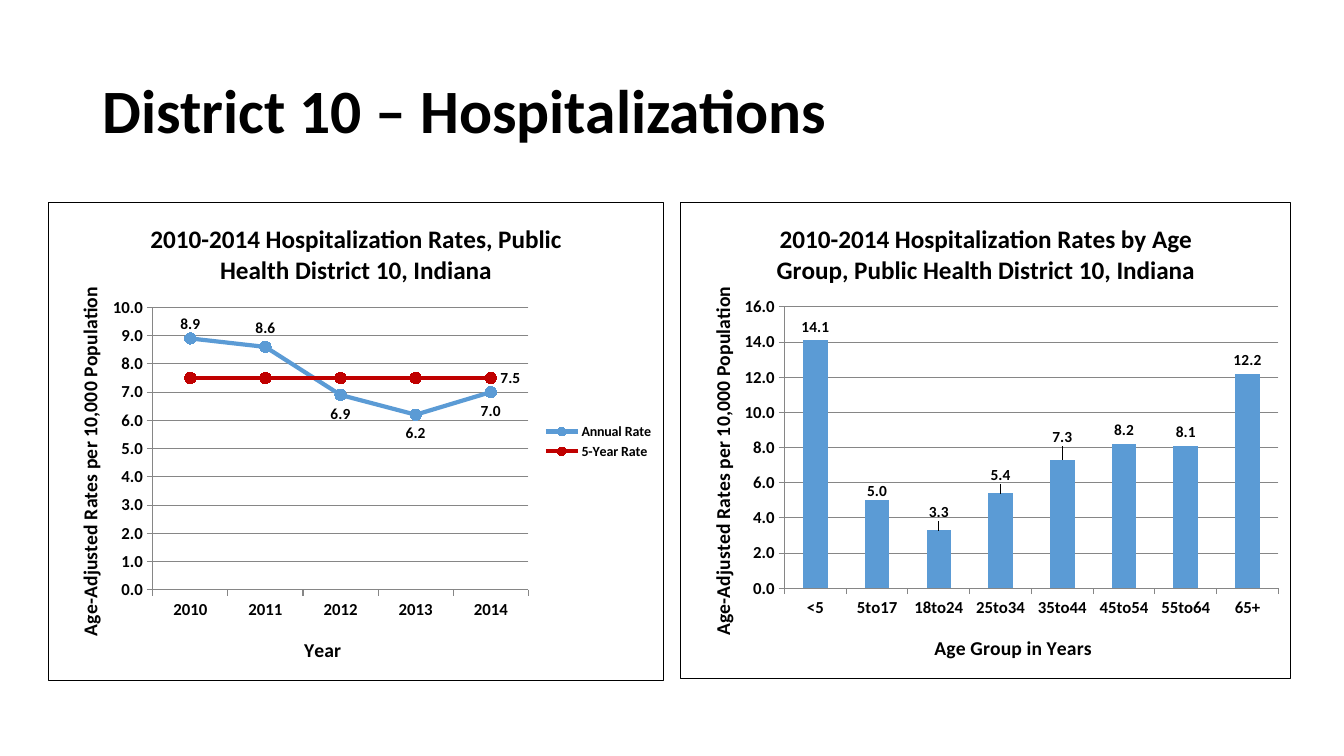
"""Build the District 10 hospitalizations slide with its two rate charts."""
import dataclasses

import lxml.etree
import pptx
import pptx.chart.data
import pptx.dml.color
import pptx.enum.chart
import pptx.enum.text
import pptx.oxml
import pptx.oxml.ns
import pptx.util

Pt = pptx.util.Pt
Position = pptx.enum.chart.XL_LABEL_POSITION
ChartType = pptx.enum.chart.XL_CHART_TYPE


@dataclasses.dataclass(frozen=True)
class Theme:
    font: str = "Calibri"
    ink: str = "000000"
    paper: str = "FFFFFF"
    grid: str = "868686"
    blue: str = "5B9BD5"
    red: str = "C00000"
    heading: int = 44
    chart_title: int = 18
    axis_title: int = 14
    tick: int = 12
    label: int = 11
    legend: int = 10


THEME = Theme()


def rgb(color):
    """Turn a hex string into a colour."""
    return pptx.dml.color.RGBColor.from_string(color)


def style_font(font, size, color=THEME.ink, bold=True):
    """Apply the theme typeface with a size, colour and weight."""
    font.name = THEME.font
    font.size = Pt(size)
    font.bold = bold
    font.color.rgb = rgb(color)


def write_text(frame, text, *, size, color=THEME.ink, bold=True, align=None, spacing=None):
    """Write one formatted paragraph into a text frame."""
    para = frame.paragraphs[0]
    para.alignment = align
    para.line_spacing = spacing
    span = para.add_run()
    span.text = text
    style_font(span.font, size, color, bold)


def place(parent, index, inner=False, **values):
    """Give a chart part a manual layout, as fractions of the chart."""
    qn = pptx.oxml.ns.qn
    for old in parent.findall(qn("c:layout")):
        parent.remove(old)
    layout = lxml.etree.Element(qn("c:layout"))
    manual = lxml.etree.SubElement(layout, qn("c:manualLayout"))
    settings = {"layoutTarget": "inner"} if inner else {}
    settings.update(values)
    for name, value in settings.items():
        lxml.etree.SubElement(manual, qn(f"c:{name}")).set("val", str(value))
    parent.insert(index, layout)


def style_axis(axis, title, x, y):
    """Format an axis and place its title."""
    write_text(axis.axis_title.text_frame, title, size=THEME.axis_title)
    place(axis.axis_title.element if hasattr(axis.axis_title, "element")
          else axis.element.find(pptx.oxml.ns.qn("c:title")),
          1, xMode="edge", yMode="edge", x=x, y=y)
    style_font(axis.tick_labels.font, THEME.tick)
    axis.major_tick_mark = pptx.enum.chart.XL_TICK_MARK.OUTSIDE
    axis.minor_tick_mark = pptx.enum.chart.XL_TICK_MARK.NONE
    axis.format.line.color.rgb = rgb(THEME.grid)
    axis.format.line.width = Pt(0.75)


def frame_chart(chart):
    """Fill the chart area and draw its border."""
    border = pptx.oxml.parse_xml(
        f'<c:spPr {pptx.oxml.ns.nsdecls("c", "a")}>'
        f'<a:solidFill><a:srgbClr val="{THEME.paper}"/></a:solidFill>'
        f'<a:ln w="{Pt(0.75)}"><a:solidFill><a:srgbClr val="{THEME.ink}"/></a:solidFill></a:ln>'
        '</c:spPr>')
    chart.element.find(pptx.oxml.ns.qn("c:chart")).addnext(border)


def add_rate_chart(slide, kind, bounds, title, category_title, categories, rates,
                   top, step, plot_width):
    """Add a rate chart with titles, axes and a border."""
    data = pptx.chart.data.CategoryChartData(number_format="0.0")
    data.categories = categories
    for name, values in rates.items():
        data.add_series(name, values)
    chart = slide.shapes.add_chart(kind, *map(Pt, bounds), data).chart
    style_font(chart.font, THEME.legend, bold=False)
    frame_chart(chart)
    chart.has_legend = False
    chart.has_title = True
    write_text(chart.chart_title.text_frame, title, size=THEME.chart_title)
    chart.plots[0].vary_by_categories = False
    style_axis(chart.category_axis, category_title, 0.41, 0.9)
    axis = chart.value_axis
    style_axis(axis, "Age-Adjusted Rates per 10,000 Population", 0.04, 0.17)
    axis.minimum_scale, axis.maximum_scale, axis.major_unit = 0, top, step
    axis.tick_labels.number_format = "0.0"
    axis.tick_labels.number_format_is_linked = False
    axis.has_major_gridlines = True
    axis.major_gridlines.format.line.color.rgb = rgb(THEME.grid)
    axis.major_gridlines.format.line.width = Pt(0.75)
    plot_area = chart.element.xpath("c:chart/c:plotArea")[0]
    place(plot_area, 0, inner=True, xMode="edge", yMode="edge",
          x=0.17, y=0.22, w=plot_width, h=0.59)
    return chart


def label_series(series, position):
    """Show the value of every point in a series."""
    labels = series.data_labels
    labels.show_value = True
    labels.number_format = "0.0"
    labels.number_format_is_linked = False
    labels.position = position
    style_font(labels.font, THEME.label)


def label_point(chart, series, index, position, shift=0):
    """Label one point, moved down by a fraction of the chart height."""
    label = series.points[index].data_label
    style_font(label.font, THEME.label)
    label.position = position
    if shift:
        element = chart.element.xpath(
            f".//c:ser[c:idx/@val={series.index}]/c:dLbls/c:dLbl[c:idx/@val={index}]")[0]
        place(element, 1, x=0, y=shift)


def style_line(series, color):
    """Colour a line and its round markers."""
    series.smooth = False
    series.format.line.color.rgb = rgb(color)
    series.format.line.width = Pt(3)
    marker = series.marker
    marker.style = pptx.enum.chart.XL_MARKER_STYLE.CIRCLE
    marker.size = 8
    marker.format.fill.solid()
    marker.format.fill.fore_color.rgb = rgb(color)
    marker.format.line.color.rgb = rgb(color)


def add_yearly_chart(slide):
    """Add the line chart of annual and five-year rates."""
    chart = add_rate_chart(
        slide, ChartType.LINE_MARKERS, (34, 144, 440.6, 342.7),
        "2010-2014 Hospitalization Rates, Public Health District 10, Indiana", "Year",
        ["2010", "2011", "2012", "2013", "2014"],
        {"Annual Rate": (8.9, 8.6, 6.9, 6.2, 7), "5-Year Rate": (7.5,) * 5}, 10, 1, 0.61)
    annual, five_year = chart.plots[0].series
    style_line(annual, THEME.blue)
    style_line(five_year, THEME.red)
    label_series(annual, Position.BELOW)
    label_point(chart, annual, 0, Position.ABOVE, 0.01)
    label_point(chart, annual, 1, Position.ABOVE)
    label_point(chart, five_year, 4, Position.RIGHT)
    five_year.data_labels.show_value = False
    chart.has_legend = True
    chart.legend.position = pptx.enum.chart.XL_LEGEND_POSITION.RIGHT
    chart.legend.include_in_layout = False
    style_font(chart.legend.font, THEME.legend)


def add_age_chart(slide):
    """Add the column chart of rates by age group."""
    chart = add_rate_chart(
        slide, ChartType.COLUMN_CLUSTERED, (486, 144, 436.3, 341.3),
        "2010-2014 Hospitalization Rates by Age Group, Public Health District 10, Indiana",
        "Age Group in Years",
        ["<5", "5to17", "18to24", "25to34", "35to44", "45to54", "55to64", "65+"],
        {"Series 1": (14.1, 5, 3.3, 5.4, 7.3, 8.2, 8.1, 12.2)}, 16, 2, 0.81)
    chart.plots[0].gap_width = 150
    ages = chart.plots[0].series[0]
    ages.format.fill.solid()
    ages.format.fill.fore_color.rgb = rgb(THEME.blue)
    label_series(ages, Position.OUTSIDE_END)
    for index, shift in {1: 0.01, 2: -0.01, 3: -0.01, 4: -0.02}.items():
        label_point(chart, ages, index, Position.OUTSIDE_END, shift)


def main():
    """Build and save the deck."""
    deck = pptx.Presentation()
    deck.slide_width, deck.slide_height = Pt(960), Pt(540)
    slide = deck.slides.add_slide(deck.slide_layouts.get_by_name("Title Only"))
    box = slide.shapes.title
    box.left, box.top, box.width, box.height = Pt(66), Pt(28.75), Pt(828), Pt(104.4)
    box.text_frame.vertical_anchor = pptx.enum.text.MSO_ANCHOR.MIDDLE
    write_text(box.text_frame, "District 10 – Hospitalizations", size=THEME.heading,
               align=pptx.enum.text.PP_ALIGN.LEFT, spacing=0.9)
    add_yearly_chart(slide)
    add_age_chart(slide)
    deck.save("out.pptx")


if __name__ == "__main__":
    main()
